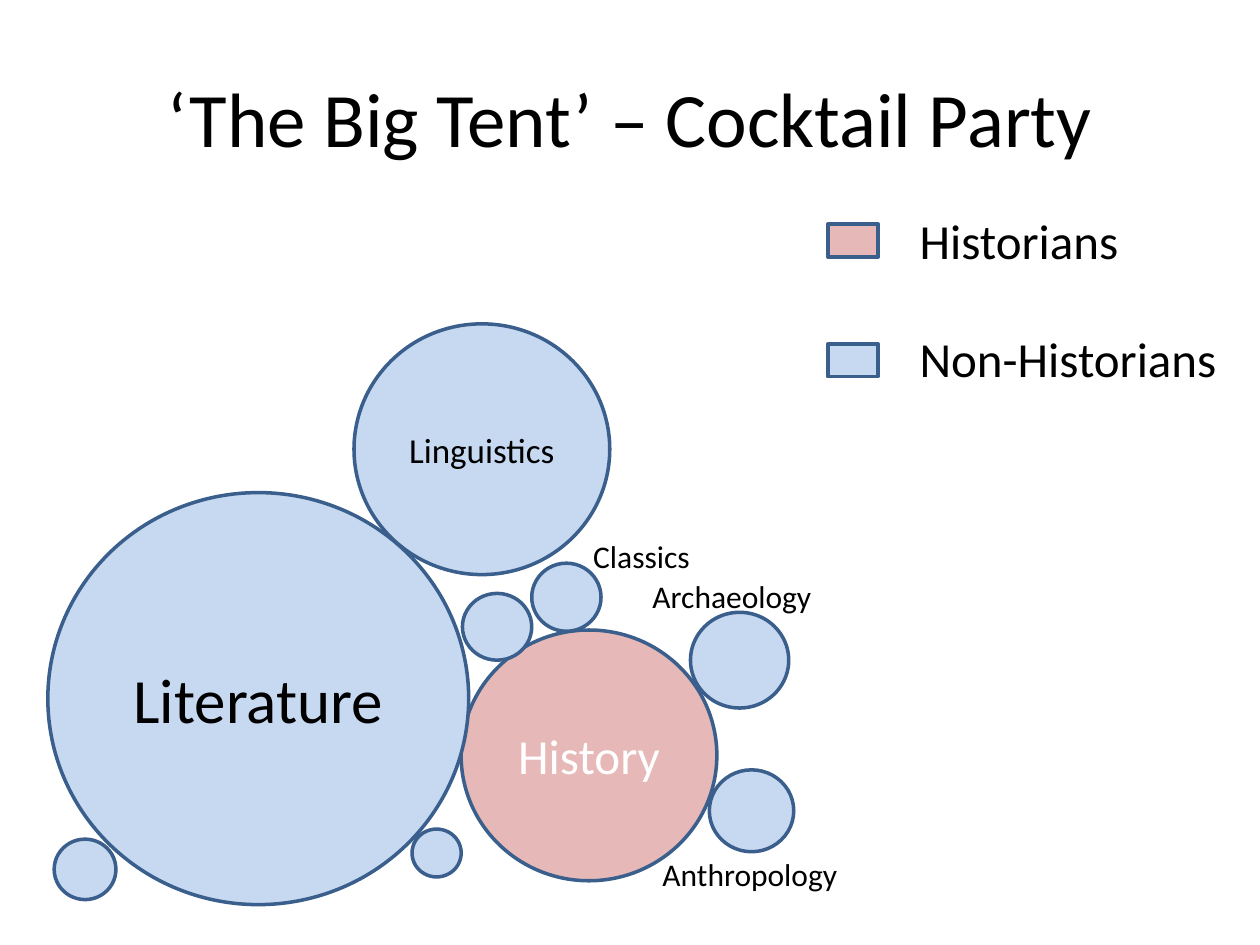
from dataclasses import dataclass

from pptx import Presentation
from pptx.dml.color import RGBColor
from pptx.enum.shapes import MSO_SHAPE as Shape
from pptx.enum.text import MSO_ANCHOR as Anchor, PP_ALIGN as Align
from pptx.util import Inches, Pt

FONT = "Calibri"
BLACK, WHITE = "000000", "FFFFFF"
PINK, BLUE, OUTLINE = "E6B9B8", "C6D9F1", "3A5F8C"


@dataclass
class Bubble:
    left: float
    top: float
    width: float
    height: float
    fill: str = BLUE
    text: str = ""
    size: int = 18
    color: str = BLACK


@dataclass
class Label:
    text: str
    left: float
    top: float
    width: float


HISTORY = Bubble(3.66, 5, 2.03, 1.99, PINK, "History", 28, WHITE)
OTHER_FIELDS = [
    Bubble(3.67, 4.71, 0.55, 0.53),
    Bubble(5.48, 4.86, 0.78, 0.76),
    Bubble(5.63, 6.11, 0.67, 0.65),
    Bubble(4.22, 4.47, 0.55, 0.54),
    Bubble(3.27, 6.58, 0.39, 0.38),
    Bubble(0.43, 6.66, 0.49, 0.48),
    Bubble(0.38, 3.91, 3.34, 3.27, text="Literature", size=36),
    Bubble(2.81, 2.57, 2.03, 1.99, text="Linguistics", size=20),
]
LABELS = [
    Label("Archaeology", 5.08, 4.53, 1.48),
    Label("Anthropology", 5.16, 6.74, 1.6),
    Label("Classics", 4.61, 4.21, 0.98),
]
LEGEND = [("Historians", PINK), ("Non-Historians", BLUE)]


def rgb(color: str) -> RGBColor:
    return RGBColor.from_string(color)


def add_run(p, text: str, size: int, color: str = BLACK) -> None:
    r = p.add_run()
    r.text = text
    r.font.name = FONT
    r.font.size = Pt(size)
    r.font.color.rgb = rgb(color)


def add_textbox(s, left: float, top: float, width: float, height: float,
                wrap: bool = False):
    tf = s.shapes.add_textbox(Inches(left), Inches(top),
                              Inches(width), Inches(height)).text_frame
    tf.word_wrap = wrap
    return tf


def add_filled(s, kind: Shape, left: float, top: float, width: float,
               height: float, fill: str):
    sp = s.shapes.add_shape(kind, Inches(left), Inches(top),
                            Inches(width), Inches(height))
    sp.shadow.inherit = False
    sp.fill.solid()
    sp.fill.fore_color.rgb = rgb(fill)
    sp.line.color.rgb = rgb(OUTLINE)
    sp.line.width = Pt(2)
    return sp


def add_bubble(s, b: Bubble) -> None:
    sp = add_filled(s, Shape.OVAL, b.left, b.top, b.width, b.height, b.fill)
    if b.text:
        tf = sp.text_frame
        tf.vertical_anchor = Anchor.MIDDLE
        p = tf.paragraphs[0]
        p.alignment = Align.CENTER
        add_run(p, b.text, b.size, b.color)


def add_legend(s) -> None:
    tf = add_textbox(s, 7.2, 1.62, 2.58, 1.51)
    for i, (text, fill) in enumerate(LEGEND):
        p = tf.add_paragraph() if i else tf.paragraphs[0]
        if i:
            p.space_before = Pt(34)
        add_run(p, text, 28)
        add_filled(s, Shape.RECTANGLE, 6.57, 1.78 + 0.95 * i, 0.4, 0.26, fill)


def main() -> None:
    prs = Presentation()
    prs.slide_width, prs.slide_height = Inches(10), Inches(7.5)
    s = prs.slides.add_slide(prs.slide_layouts[6])

    # Title
    tf = add_textbox(s, 0.5, 0.3, 9, 1.25, wrap=True)
    tf.vertical_anchor = Anchor.MIDDLE
    p = tf.paragraphs[0]
    p.alignment = Align.CENTER
    add_run(p, "‘The Big Tent’ – Cocktail Party", 44)

    # Labels of the small bubbles
    for label in LABELS:
        tf = add_textbox(s, label.left, label.top, label.width, 0.4)
        add_run(tf.paragraphs[0], label.text, 18)

    # Bubbles and legend, from back to front
    add_bubble(s, HISTORY)
    add_legend(s)
    for bubble in OTHER_FIELDS:
        add_bubble(s, bubble)

    prs.save("out.pptx")


if __name__ == "__main__":
    main()
